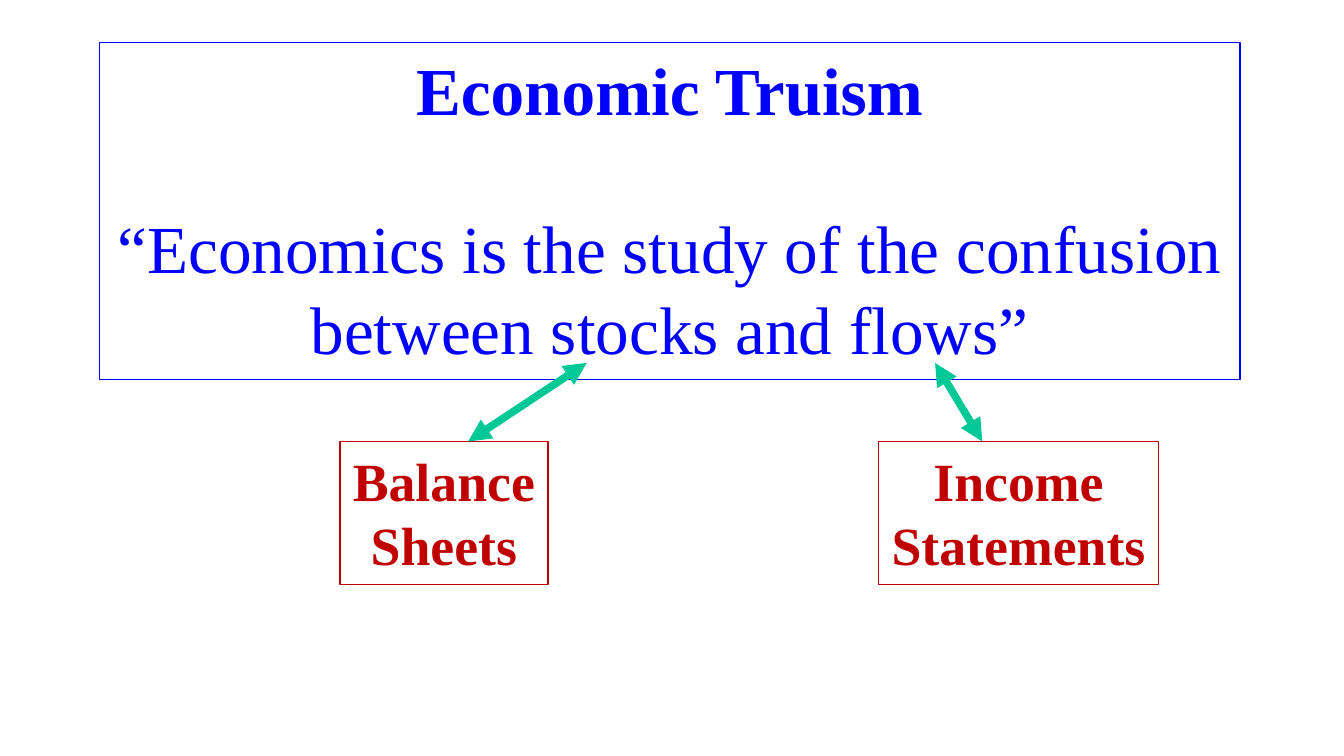
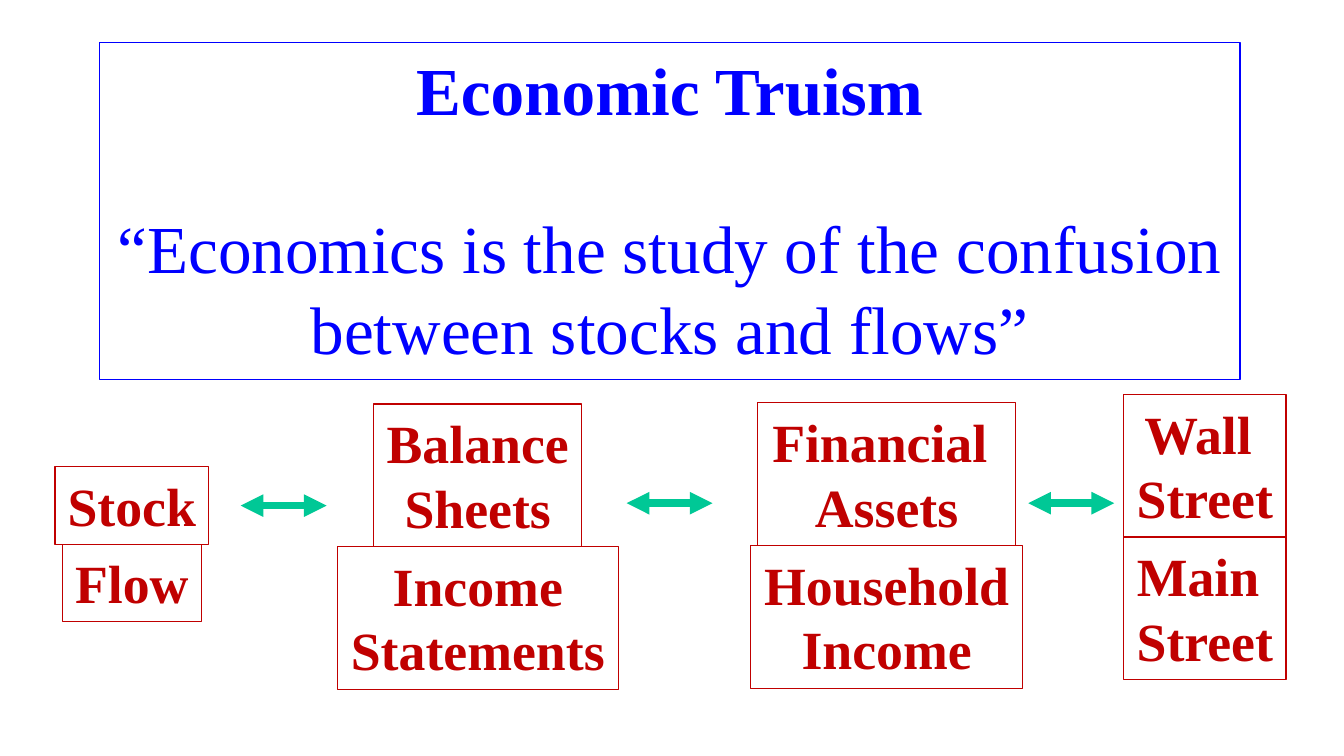
from lxml.etree import SubElement
from pptx import Presentation
from pptx.dml.color import RGBColor
from pptx.enum.shapes import MSO_CONNECTOR as Connector
from pptx.enum.text import MSO_AUTO_SIZE as AutoSize, PP_ALIGN as Align
from pptx.oxml.ns import qn
from pptx.util import Inches, Pt

COLORS = {"truism": "0000FF", "term": "C00000", "arrow": "00C896"}
FONT = "Times New Roman"
TERM_WIDTHS = {
    "Stock": 1.27,
    "Flow": 1.15,
    "Balance\nSheets": 1.72,
    "Income\nStatements": 2.32,
    "Financial \nAssets": 2.13,
    "Household\nIncome": 2.25,
    "Wall \nStreet": 1.34,
    "Main \nStreet": 1.34,
}


class Deck:
    """Holds the shared style and the slide being built."""

    def __init__(self):
        self.prs = Presentation()
        self.prs.slide_width = Inches(11.11)
        self.prs.slide_height = Inches(6.25)
        self.slide = None

    def color(self, name):
        return RGBColor.from_string(COLORS[name])

    def new_slide(self):
        """Add a slide with the truism on top."""
        self.slide = self.prs.slides.add_slide(self.prs.slide_layouts[6])
        text = ("Economic Truism\n“Economics is the study of the confusion\n"
                "between stocks and flows”")
        heading, quote, _ = self.box(text, 0.82, 0.35, 9.43, 2.79, "truism", 40)
        heading.font.bold = True
        quote.space_before = Pt(46)

    def box(self, text, left, top, width, height, color, size, bold=False):
        """Add an outlined box of centred lines and return its paragraphs."""
        box = self.slide.shapes.add_textbox(
            Inches(left), Inches(top), Inches(width), Inches(height))
        box.line.color.rgb = self.color(color)
        box.line.width = Pt(0.75)
        frame = box.text_frame
        frame.word_wrap = False
        frame.auto_size = AutoSize.SHAPE_TO_FIT_TEXT
        frame.text = text
        for paragraph in frame.paragraphs:
            paragraph.alignment = Align.CENTER
            font = paragraph.font
            font.name, font.size, font.bold = FONT, Pt(size), bold
            font.color.rgb = self.color(color)
        return frame.paragraphs

    def term(self, text, center, top):
        """Add a term box centred on a column and return its bottom edge."""
        width = TERM_WIDTHS[text]
        height = 0.1 + 0.54 * len(text.split("\n"))
        self.box(text, center - width / 2, top, width, height, "term", 32, True)
        return top + height

    def arrow(self, x1, y1, x2, y2):
        """Add a double-headed arrow."""
        arrow = self.slide.shapes.add_connector(
            Connector.STRAIGHT, Inches(x1), Inches(y1), Inches(x2), Inches(y2))
        arrow.line.color.rgb = self.color("arrow")
        arrow.line.width = Pt(4.5)
        properties = arrow._element.spPr
        for end in ("a:headEnd", "a:tailEnd"):
            SubElement(properties.find(qn("a:ln")), qn(end), type="triangle")
        SubElement(properties, qn("a:effectLst"))


def main():
    deck = Deck()

    # Slide 1: stocks and flows traced to their statements
    deck.new_slide()
    deck.term("Balance\nSheets", 3.67, 3.65)
    deck.term("Income\nStatements", 8.42, 3.65)
    deck.arrow(7.73, 3, 8.12, 3.65)
    deck.arrow(4.85, 3, 3.87, 3.65)

    # Slide 2: each stock stacked on its flow
    deck.new_slide()
    pairs = [
        (1.09, 3.86, "Stock", "Flow"),
        (3.95, 3.34, "Balance\nSheets", "Income\nStatements"),
        (7.33, 3.33, "Financial \nAssets", "Household\nIncome"),
        (9.96, 3.26, "Wall \nStreet", "Main \nStreet"),
    ]
    for center, top, stock, flow in pairs:
        bottom = deck.term(stock, center, top)
        deck.term(flow, center, bottom)

    # Arrows between the pairs
    for left, y in [(1.99, 4.18), (5.18, 4.16), (8.5, 4.16)]:
        deck.arrow(left, y, left + 0.71, y)

    deck.prs.save("out.pptx")


if __name__ == "__main__":
    main()
